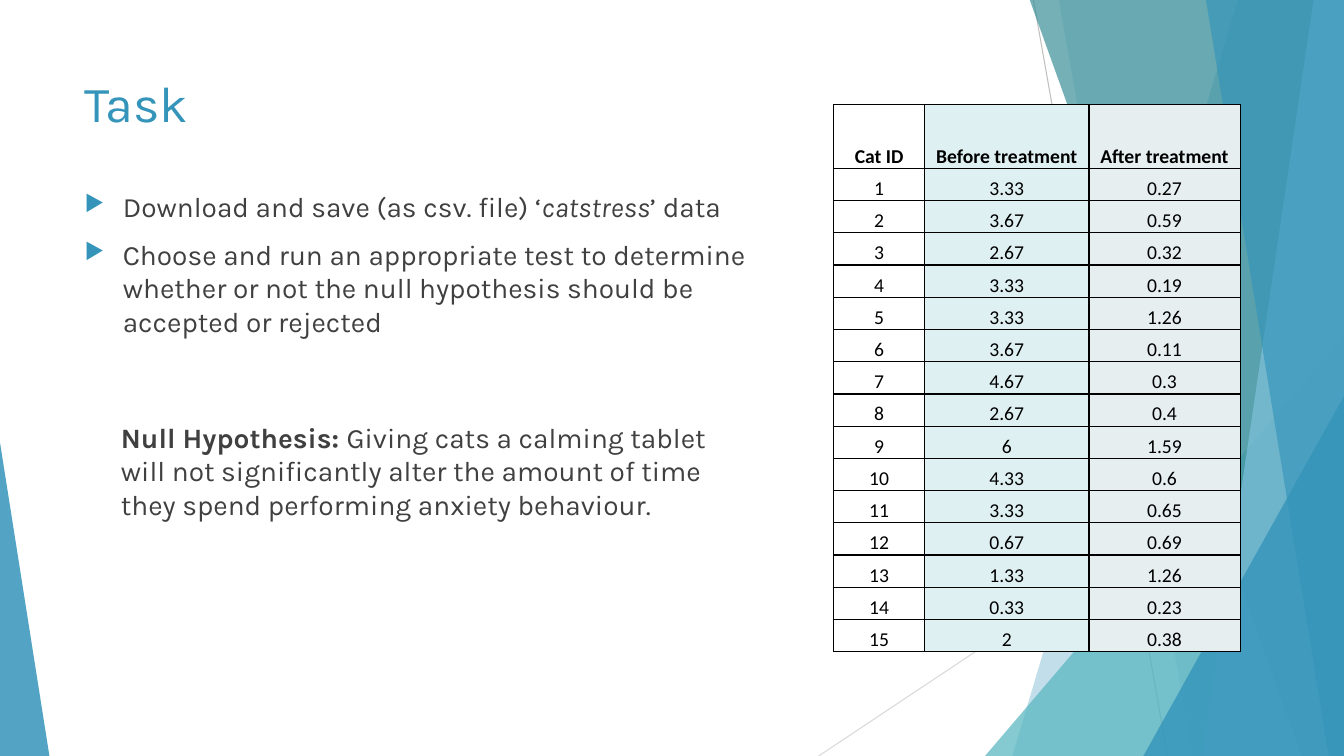
import pptx
import pptx.util
import pptx.dml.color
import pptx.enum.shapes
import pptx.enum.text
import pptx.oxml
import pptx.oxml.ns
from lxml import etree

Inches, Pt = pptx.util.Inches, pptx.util.Pt
RGB = pptx.dml.color.RGBColor.from_string
ANCHOR = pptx.enum.text.MSO_ANCHOR
ALIGN = pptx.enum.text.PP_ALIGN

COLORS = {
    "blue": "3494BA", "teal": "58B6C0", "deep_teal": "3A8F98", "sky": "7FC1DB",
    "text": "404040", "black": "000000", "grey": "BFBFBF", "pale_grey": "D9D9D9",
    "before": "DEF0F2", "after": "E6EEF0",
}
TOP, BOTTOM, RIGHT = -0.01, 7.5, 13.33


def add_xml(parent, tag, **attrs):
    return etree.SubElement(parent, pptx.oxml.ns.qn(tag), attrs)


def add_run(p, text, font="Karla", size=20, color="text", bold=False, italic=False):
    r = p.add_run()
    r.text = text
    r.font.name, r.font.size = font, Pt(size)
    r.font.bold, r.font.italic = bold, italic
    r.font.color.rgb = RGB(COLORS[color])


class SlideBuilder:
    def __init__(self, s):
        self.s = s

    def line(self, x1, y1, x2, y2, color):
        c = self.s.shapes.add_connector(
            pptx.enum.shapes.MSO_CONNECTOR.STRAIGHT,
            Inches(x1), Inches(y1), Inches(x2), Inches(y2))
        c.line.color.rgb = RGB(COLORS[color])
        c.line.width = Pt(0.75)
        add_xml(c._element.spPr, "a:effectLst")

    def paint(self, sp, color, alpha):
        sp.shadow.inherit = False
        sp.fill.solid()
        sp.fill.fore_color.rgb = RGB(COLORS[color])
        sp.line.fill.background()
        clr = sp._element.spPr.find(".//" + pptx.oxml.ns.qn("a:srgbClr"))
        add_xml(clr, "a:alpha", val=str(alpha * 1000))

    def band(self, top_x, bottom_x, color, alpha):
        """Band from a slanted left edge to the right side of the slide."""
        points = [(RIGHT, TOP), (RIGHT, BOTTOM), (bottom_x, BOTTOM)]
        fb = self.s.shapes.build_freeform(Inches(top_x), Inches(TOP), scale=1.0)
        fb.add_line_segments([(Inches(x), Inches(y)) for x, y in points], close=True)
        self.paint(fb.convert_to_shape(), color, alpha)

    def triangle(self, x, y, w, h, peak, color, alpha):
        sp = self.s.shapes.add_shape(
            pptx.enum.shapes.MSO_SHAPE.ISOSCELES_TRIANGLE,
            Inches(x), Inches(y), Inches(w), Inches(h))
        sp.adjustments[0] = peak
        self.paint(sp, color, alpha)

    def text(self, x, y, w, h, paragraphs, indent=0.0, bullet=False, before=10):
        """Each paragraph is a list of (text, format) pairs."""
        tf = self.s.shapes.add_textbox(Inches(x), Inches(y), Inches(w), Inches(h)).text_frame
        tf.word_wrap = True
        for i, runs in enumerate(paragraphs):
            p = tf.add_paragraph() if i else tf.paragraphs[0]
            p.space_before = Pt(before)
            pPr = p._p.get_or_add_pPr()
            pPr.set("marL", str(Inches(indent)))
            if bullet:
                pPr.set("indent", str(-Inches(indent)))
                clr = add_xml(pPr, "a:buClr")
                add_xml(clr, "a:srgbClr", val=COLORS["blue"])
                add_xml(pPr, "a:buSzPct", val="80000")
                add_xml(pPr, "a:buChar", char="▶")
            for text, style in runs:
                add_run(p, text, **style)

    def cell(self, cell, text, fill, bold):
        cell.vertical_anchor = ANCHOR.BOTTOM
        cell.margin_left = cell.margin_right = cell.margin_top = Inches(0.01)
        cell.margin_bottom = 0
        p = cell.text_frame.paragraphs[0]
        p.alignment = ALIGN.CENTER
        add_run(p, text, font="Calibri", size=14, color="black", bold=bold)
        # Borders come before the fill in the cell properties
        tcPr = cell._tc.get_or_add_tcPr()
        for side in ("L", "R", "T", "B"):
            ln = add_xml(tcPr, "a:ln" + side, w=str(Pt(1)))
            solid = add_xml(ln, "a:solidFill")
            add_xml(solid, "a:srgbClr", val=COLORS["black"])
        if fill:
            cell.fill.solid()
            cell.fill.fore_color.rgb = RGB(COLORS[fill])
        else:
            cell.fill.background()

    def table(self, x, y, rows, widths, heights, fills):
        t = self.s.shapes.add_table(
            len(rows), len(widths), Inches(x), Inches(y),
            Inches(sum(widths)), Inches(sum(heights))).table
        t.horz_banding = t.first_row = False
        for col, w in zip(t.columns, widths):
            col.width = Inches(w)
        for i, (values, h) in enumerate(zip(rows, heights)):
            t.rows[i].height = Inches(h)
            for j, value in enumerate(values):
                self.cell(t.cell(i, j), str(value), fills[j], bold=i == 0)


def main():
    prs = pptx.Presentation()
    prs.slide_width, prs.slide_height = Inches(RIGHT), Inches(BOTTOM)
    b = SlideBuilder(prs.slides.add_slide(prs.slide_layouts[6]))

    # Background facets
    b.line(10.25, 0, 11.58, BOTTOM, "grey")
    b.line(RIGHT, 4.03, 8.12, BOTTOM, "pale_grey")
    b.band(12.28, 10.04, "blue", 30)
    b.band(10.5, 11.83, "blue", 20)
    b.triangle(9.77, 3.33, 3.56, 4.17, 1, "teal", 72)
    b.band(10.21, 12.91, "deep_teal", 70)
    b.band(13.03, 11.92, "sky", 70)
    b.band(11.96, 13.18, "blue", 65)
    b.triangle(11.34, 3.93, 1.99, 3.57, 1, "blue", 80)
    b.triangle(0, 4.39, 0.49, 3.11, 0, "blue", 85)

    # Title and tasks
    b.text(0.74, 0.67, 9.4, 1.44, [[("Task", {"size": 36, "color": "blue"})]], before=0)
    b.text(0.74, 1.83, 7.07, 4.24, [
        [("Download and save (as csv. file) ‘", {}), ("catstress", {"italic": True}),
         ("’ data", {})],
        [("Choose and run an appropriate test to determine whether or not the null "
          "hypothesis should be accepted or rejected", {})],
    ], indent=0.38, bullet=True)

    # Cat stress data
    before = [3.33, 3.67, 2.67, 3.33, 3.33, 3.67, 4.67, 2.67, 6, 4.33, 3.33, 0.67, 1.33, 0.33, 2]
    after = [0.27, 0.59, 0.32, 0.19, 1.26, 0.11, 0.3, 0.4, 1.59, 0.6, 0.65, 0.69, 1.26, 0.23, 0.38]
    rows = [("Cat ID", "Before treatment", "After treatment")]
    rows += zip(range(1, len(before) + 1), before, after)
    b.table(8.27, 1.04, rows, widths=[0.9, 1.63, 1.5],
            heights=[0.63] + [0.32] * len(before), fills=[None, "before", "after"])

    # Null hypothesis
    b.text(1.05, 4.12, 6.41, 1.95, [
        [("Null Hypothesis: ", {"bold": True}),
         ("Giving cats a calming tablet will not significantly alter the amount of time "
          "they spend performing anxiety behaviour.", {})],
    ], indent=0.05)

    prs.save("out.pptx")


if __name__ == "__main__":
    main()
